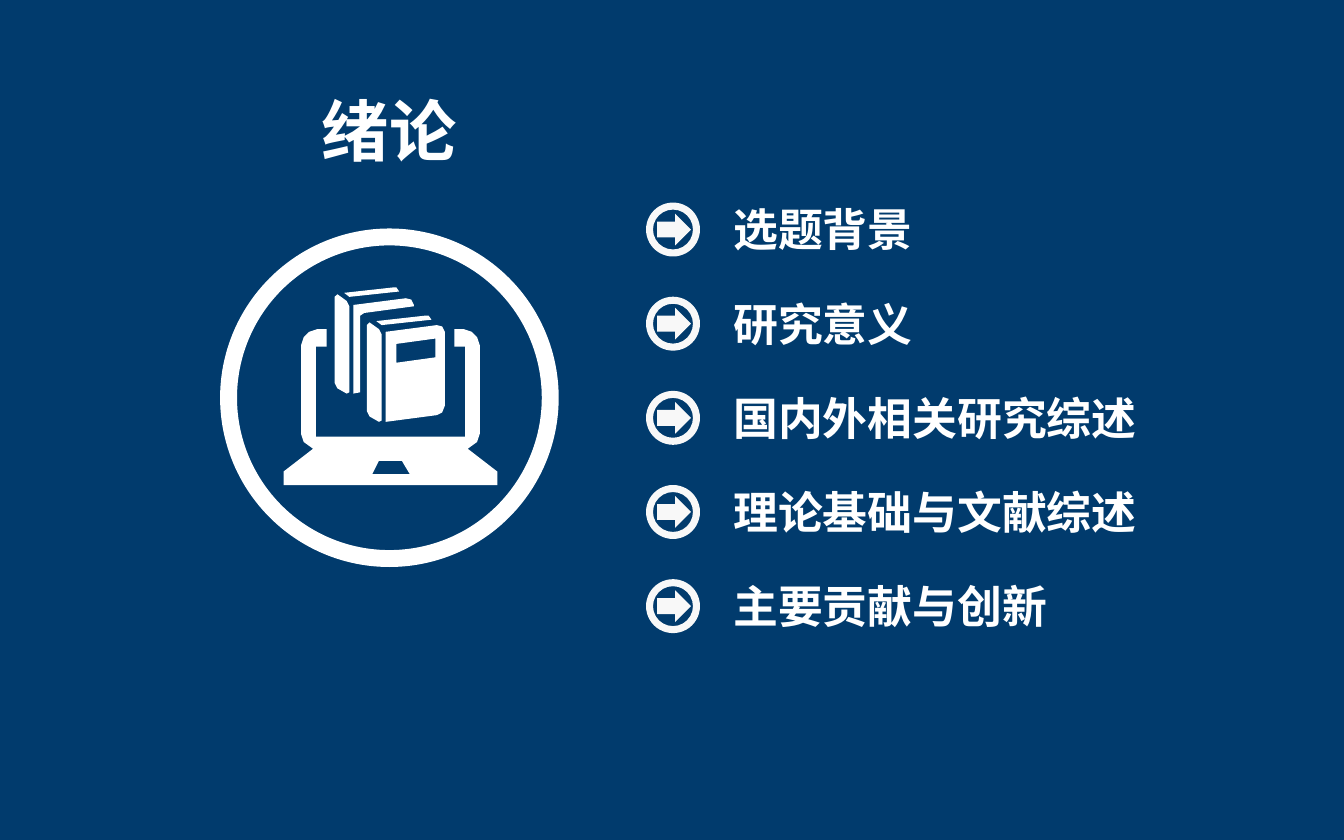
from lxml import etree
from pptx import Presentation
from pptx.dml.color import RGBColor
from pptx.enum.shapes import MSO_SHAPE
from pptx.enum.text import MSO_ANCHOR, MSO_AUTO_SIZE, PP_ALIGN
from pptx.oxml.ns import qn
from pptx.util import Cm, Pt

DONUT, ARROW = MSO_SHAPE.DONUT, MSO_SHAPE.RIGHT_ARROW
MIDDLE, NO_FIT = MSO_ANCHOR.MIDDLE, MSO_AUTO_SIZE.NONE
LEFT, CENTER = PP_ALIGN.LEFT, PP_ALIGN.CENTER
NAVY = RGBColor(0x01, 0x3B, 0x6D)
WHITE = RGBColor(0xFF, 0xFF, 0xFF)
OFF_WHITE = RGBColor(0xF8, 0xF8, 0xF8)
FONT = "Noto Sans CJK SC"


def write_heading(shape, text, size, align):
    frame = shape.text_frame
    frame.text = text
    frame.word_wrap = False
    frame.auto_size = NO_FIT
    frame.vertical_anchor = MIDDLE
    paragraph = frame.paragraphs[0]
    paragraph.alignment = align
    font = paragraph.font
    font.size, font.bold, font.name = Pt(size), True, FONT
    font.color.rgb = WHITE
    defaults = paragraph._p.pPr.find(qn("a:defRPr"))
    etree.SubElement(defaults, qn("a:ea"), typeface=FONT)


def paint(shape, color):
    shape.shadow.inherit = False
    shape.fill.solid()
    shape.fill.fore_color.rgb = color
    shape.line.fill.background()


prs = Presentation()
prs.slide_width, prs.slide_height = Cm(25.4), Cm(15.88)
slide = prs.slides.add_slide(prs.slide_layouts[5])
slide.background.fill.solid()
slide.background.fill.fore_color.rgb = NAVY

title = slide.shapes.title
title.left, title.top, title.width, title.height = Cm(5.82), Cm(1.55), Cm(3.07), Cm(1.8)
write_heading(title, "绪论", 36, CENTER)

# Chapter sections, each with an arrow in a ring
sections = ["选题背景", "研究意义", "国内外相关研究综述", "理论基础与文献综述", "主要贡献与创新"]
for i, section in enumerate(sections):
    middle = 4.34 + 1.78 * i
    ring = slide.shapes.add_shape(DONUT, Cm(12.21), Cm(middle - 0.51), Cm(1.02), Cm(1.02))
    ring.adjustments[0] = 0.13
    paint(ring, OFF_WHITE)
    arrow = slide.shapes.add_shape(ARROW, Cm(12.42), Cm(middle - 0.3), Cm(0.64), Cm(0.6))
    paint(arrow, OFF_WHITE)
    label = slide.shapes.add_textbox(
        Cm(13.61), Cm(middle - 0.65), Cm(0.55 + 0.85 * len(section)), Cm(1.28))
    write_heading(label, section, 24, LEFT)

# Laptop with books inside a large ring
icon_ring = slide.shapes.add_shape(DONUT, Cm(4.16), Cm(4.32), Cm(6.4), Cm(6.4))
icon_ring.adjustments[0] = 0.05
paint(icon_ring, WHITE)

# Icon outlines are in hundredths of 2.54 cm
ICON_UNIT = Cm(2.54) / 100
MIRROR_SUM = 581
laptop_left = [(235, 325), (235, 258), (243, 258), (243, 245), (236, 245), (230, 247),
               (226, 251), (224, 257), (224, 323), (226, 329), (233, 334), (211, 351), (211, 361)]
laptop = laptop_left + [(MIRROR_SUM - x, y) for x, y in reversed(laptop_left)]
touchpad = [(282, 343), (299, 343), (305, 353), (277, 353)]
back_cover = [(263, 227), (302, 222), (306, 223), (308, 227), (308, 228), (271, 333 - 100),
              (268, 235), (268, 292), (263, 293)]
front_cover = [(287, 247), (325, 242), (329, 243), (331, 247), (331, 302), (329, 307),
               (325, 309), (287, 314)]
cover_label = [(295, 256), (324, 252), (324, 266), (295, 270)]
spine = [(251, 219), (258, 224), (260, 228), (260, 292), (258, 293), (251, 289),
         (249, 285), (249, 221)]
page_tops = [(256, 218), (260, 221), (297, 217), (295, 214), (292, 214)]

outlines = [laptop, touchpad, back_cover, front_cover, cover_label]
for dx, dy in [(0, 0), (24, 21)]:
    for part in (spine, page_tops):
        outlines.append([(x + dx, y + dy) for x, y in part])

builder = slide.shapes.build_freeform(*outlines[0][0], scale=ICON_UNIT)
builder.add_line_segments(outlines[0][1:])
for outline in outlines[1:]:
    builder.move_to(*outline[0])
    builder.add_line_segments(outline[1:])
paint(builder.convert_to_shape(), WHITE)

prs.save("out.pptx")
